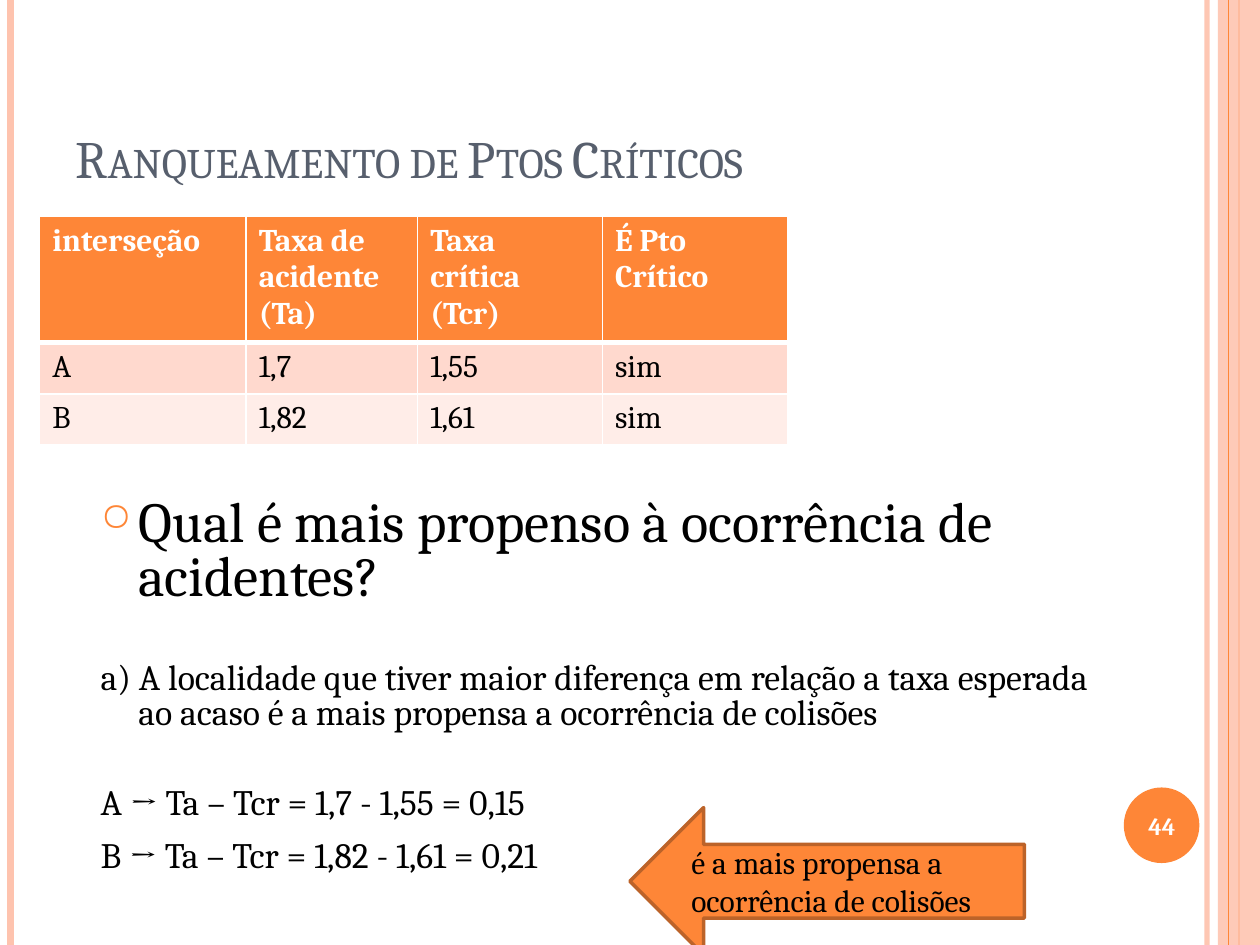
from lxml import etree
from pptx import Presentation
from pptx import util as u
from pptx.dml import color
from pptx.enum import shapes, text
from pptx.oxml import ns

Pt = u.Pt
RGB = color.RGBColor
ORANGE = RGB(0xFE, 0x86, 0x37)
PEACH = RGB(0xFE, 0xC3, 0xAE)
RUST = RGB(0xBC, 0x63, 0x29)
SLATE = RGB(0x57, 0x5F, 0x6D)
ROSE = RGB(0xFF, 0xD9, 0xCE)
PALE = RGB(0xFF, 0xED, 0xE8)
WHITE = RGB(0xFF, 0xFF, 0xFF)
BLACK = RGB(0, 0, 0)
FONT = "Cambria"
WIDE, HIGH = 720, 540

RULES = [
    (689.8, PEACH, 3, 93),
    (6, PEACH, 4.5, 100),
    (708, ORANGE, 1.5, 100),
]
TITLE = "Ranqueamento de Ptos Críticos"
ROWS = [
    ("interseção", "Taxa de acidente (Ta)", "Taxa crítica\n(Tcr)", "É Pto Crítico"),
    ("A", "1,7", "1,55", "sim"),
    ("B", "1,82", "1,61", "sim"),
]
COLS = [118, 98, 105.6, 105.6]
TALL = [69.6, 29.2, 29.2]
FILLS = [ORANGE, ROSE, PALE]
BODY = [
    ("Qual é mais propenso à ocorrência de acidentes?", 32.3, 0.8, 6),
    ("a) A localidade que tiver maior diferença em relação a taxa esperada "
     "ao acaso é a mais propensa a ocorrência de colisões", 20.4, 0.8, 32),
    ("A → Ta – Tcr = 1,7 - 1,55 = 0,15", 20.4, 0.8, 32),
    ("B → Ta – Tcr = 1,82 - 1,61 = 0,21", 20.4, 1, 6),
]
NOTE = "é a mais propensa a ocorrência de colisões"


def sub(node, tag, **attrs):
    return etree.SubElement(node, ns.qn(tag), attrs)


def fade(node, pct):
    if pct < 100:
        for clr in node.iter(ns.qn("a:srgbClr")):
            sub(clr, "a:alpha", val=str(pct * 1000))


def style(font, **vals):
    tint = vals.pop("tint", BLACK)
    for key, val in {"name": FONT, **vals}.items():
        setattr(font, key, val)
    font.color.rgb = tint


def rule(x, tint, width, pct):
    line = slide.shapes.add_connector(
        shapes.MSO_CONNECTOR.STRAIGHT, Pt(x), Pt(0), Pt(x), Pt(HIGH))
    line.line.color.rgb = tint
    line.line.width = Pt(width)
    props = line._element.spPr
    fade(props, pct)
    sub(props, "a:effectLst")


def block(kind, box, tint, pct=100, edge=None):
    item = slide.shapes.add_shape(kind, *map(Pt, box))
    item.shadow.inherit = False
    item.fill.solid()
    item.fill.fore_color.rgb = tint
    fade(item._element.spPr, pct)
    if edge:
        item.line.color.rgb = edge
        item.line.width = Pt(2)
    else:
        item.line.fill.background()


def label(box, words="", anchor=text.MSO_ANCHOR.TOP, **vals):
    frame = slide.shapes.add_textbox(*map(Pt, box)).text_frame
    frame.word_wrap = True
    frame.vertical_anchor = anchor
    if words:
        frame.text = words
        style(frame.paragraphs[0].runs[0].font, **vals)
    return frame


def border(cell, base):
    props = cell._tc.get_or_add_tcPr()
    for side in "LRTB":
        width = base if side == "B" else 1
        line = sub(props, "a:ln" + side, w=str(Pt(width)))
        sub(sub(line, "a:solidFill"), "a:srgbClr", val=str(WHITE))


def grid():
    table = slide.shapes.add_table(
        len(ROWS), len(COLS), Pt(22.7), Pt(123.8),
        Pt(sum(COLS)), Pt(sum(TALL))).table
    for col, width in zip(table.columns, COLS):
        col.width = Pt(width)
    for r, row in enumerate(ROWS):
        table.rows[r].height = Pt(TALL[r])
        head = r == 0
        for c, words in enumerate(row):
            cell = table.cell(r, c)
            border(cell, 3 if head else 1)
            cell.fill.solid()
            cell.fill.fore_color.rgb = FILLS[r]
            cell.text = words
            for para in cell.text_frame.paragraphs:
                style(para.runs[0].font, size=Pt(18), bold=head,
                      tint=WHITE if head else BLACK)


def bullet(props):
    sub(sub(props, "a:buClr"), "a:srgbClr", val=str(ORANGE))
    sub(props, "a:buSzPct", val="70000")
    sub(props, "a:buChar", char="○")


def body():
    frame = label((50.4, 281.5, 588, 268.5))
    for i, (words, size, space, gap) in enumerate(BODY):
        para = frame.add_paragraph() if i else frame.paragraphs[0]
        para.line_spacing = space
        para.space_before = Pt(gap)
        run = para.add_run()
        run.text = words
        style(run.font, size=Pt(size))
        props = para._p.get_or_add_pPr()
        props.set("marL", str(Pt(21.6)))
        props.set("indent", str(-Pt(21.6)))
        if i == 0:
            bullet(props)


deck = Presentation()
deck.slide_width, deck.slide_height = Pt(WIDE), Pt(HIGH)
slide = deck.slides.add_slide(deck.slide_layouts[6])

for item in RULES:
    rule(*item)
KIND = shapes.MSO_SHAPE
block(KIND.RECTANGLE, (696, 0, 24, HIGH), PEACH, 87)
rule(702, ORANGE, 0.75, 100)
block(KIND.OVAL, (642.2, 450, 43.2, 43.2), ORANGE)
block(KIND.LEFT_ARROW, (360, 461.5, 225.4, 84.2), ORANGE, edge=RUST)

title = label((36, 21.6, 588, 90), TITLE, text.MSO_ANCHOR.BOTTOM,
              size=Pt(30), tint=SLATE)
title.paragraphs[0].runs[0].font._element.set("cap", "small")
grid()
page = label((640, 451.4, 48, 41), "44", text.MSO_ANCHOR.MIDDLE,
             size=Pt(14), bold=True, tint=WHITE)
page.paragraphs[0].alignment = text.PP_ALIGN.CENTER
body()
label((388, 478, 230.4, 51), NOTE, size=Pt(18))

deck.save("out.pptx")
